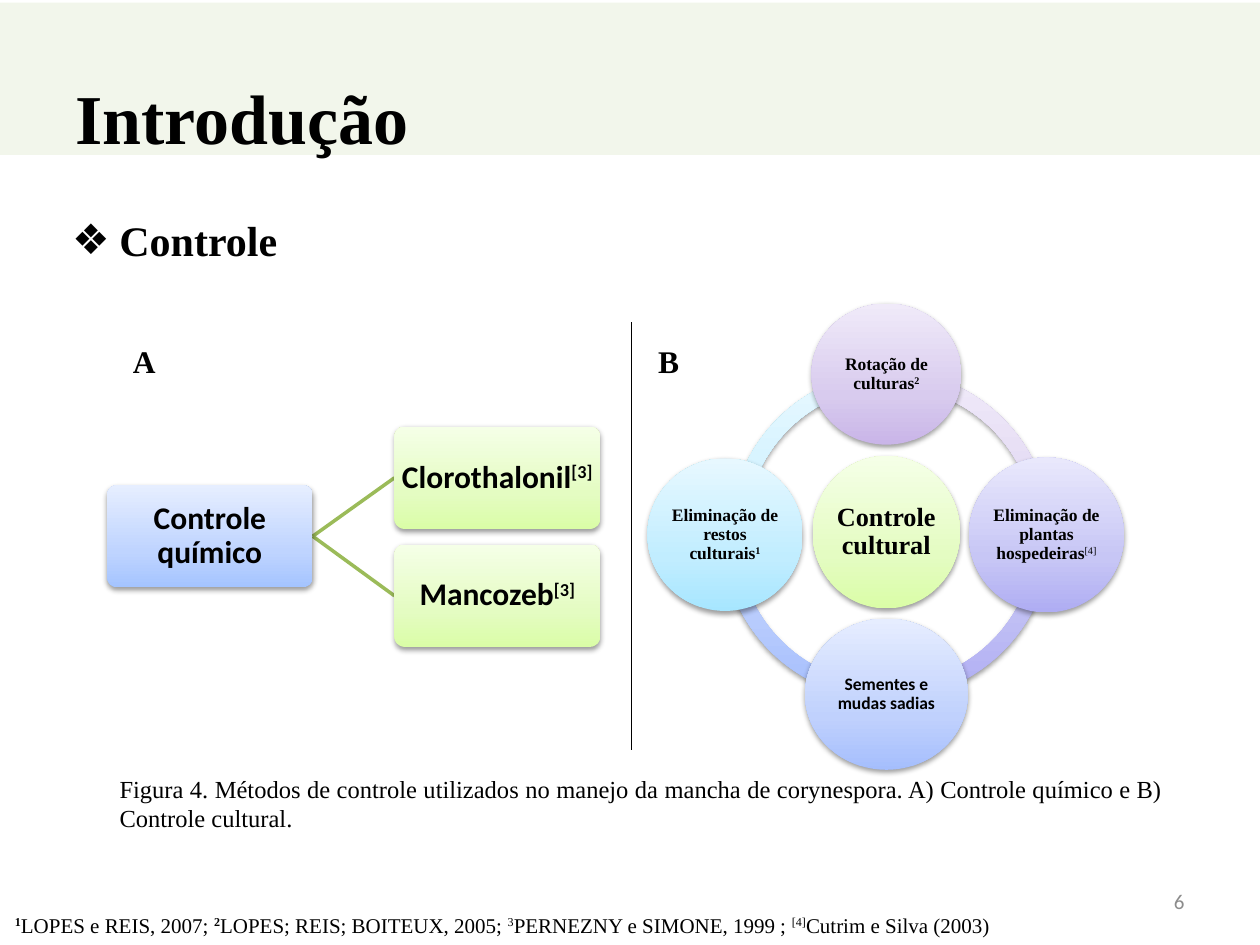
import copy

import pptx
import pptx.dml.color
import pptx.enum.shapes
import pptx.enum.text
import pptx.oxml
import pptx.oxml.ns
import pptx.util

Pt = pptx.util.Pt
SHAPE = pptx.enum.shapes.MSO_SHAPE
ALIGN = pptx.enum.text.PP_ALIGN
ANCHOR = pptx.enum.text.MSO_ANCHOR
NS = 'xmlns:a="http://schemas.openxmlformats.org/drawingml/2006/main"'
SERIF, SANS = "Times New Roman", "Calibri"

COLORS = {"black": "000000", "white": "FFFFFF", "band": "D7E4BD",
          "page": "8C8C8C", "branch": "9BBB59"}
GRADIENTS = {
    "cyan": ("A7E6FF", "C1EDFF", "E7F8FF"),
    "blue": ("A5BEFD", "C0D1FD", "E6EDFF"),
    "violet": ("AFADF3", "C7C6F5", "E9E8FC"),
    "lilac": ("C9B5E8", "D8CBEE", "F0EAF9"),
    "green": ("DAFDA7", "E4FCC2", "F5FFE7"),
    "sky": ("A4C4FF", "BFD4FF", "E6EEFF"),
}
STOPS = (0, 0.35, 1)
BOX_W, BOX_H = 117.5, 58.5


def rgb(name):
    return pptx.dml.color.RGBColor.from_string(COLORS.get(name, name))


def points(*values):
    return [Pt(value) for value in values]


def apply(target, formats):
    for name, value in formats.items():
        setattr(target, name, value)


def write(frame, runs, size, font=SERIF, color="black", bold=False,
          align=ALIGN.LEFT, anchor=ANCHOR.TOP, inset=None, spacing=None):
    """Fill the first paragraph from (text, is superscript, is bold) runs or a string."""
    apply(frame, {"word_wrap": True, "vertical_anchor": anchor})
    if inset is not None:
        sides = ("left", "right", "top", "bottom")
        apply(frame, {f"margin_{side}": Pt(inset) for side in sides})
    paragraph = frame.paragraphs[0]
    apply(paragraph, {"alignment": align, "line_spacing": spacing, "space_before": Pt(0)})
    if isinstance(runs, str):
        runs = [(runs, False, bold)]
    for text, raised, heavy in runs:
        run = paragraph.add_run()
        run.text = text
        apply(run.font, {"size": Pt(size), "name": font, "bold": heavy})
        run.font.color.rgb = rgb(color)
        if raised:
            run.font._element.set("baseline", "30000")


def add_text(slide, box, runs, size, **formats):
    write(slide.shapes.add_textbox(*points(*box)).text_frame, runs, size, **formats)


def add_plain(slide, box, color):
    shape = slide.shapes.add_shape(SHAPE.RECTANGLE, *points(*box))
    shape.shadow.inherit = False
    shape.fill.solid()
    shape.fill.fore_color.rgb = rgb(color)
    shape.line.fill.background()
    return shape


def add_glossy(slide, kind, box, gradient, adjustments=()):
    """Add a shape with a vertical three-stop gradient and a soft shadow below."""
    shape = slide.shapes.add_shape(kind, *points(*box))
    for index, value in enumerate(adjustments):
        shape.adjustments[index] = value
    shape.line.fill.background()
    shape.fill.gradient()
    shape.fill.gradient_angle = 90
    stop_list = shape._element.spPr.find(".//" + pptx.oxml.ns.qn("a:gsLst"))
    stop_list.append(copy.deepcopy(stop_list[-1]))
    for stop, position, color in zip(shape.fill.gradient_stops, STOPS, GRADIENTS[gradient]):
        stop.position = position
        stop.color.rgb = rgb(color)
    shape._element.spPr.append(pptx.oxml.parse_xml(
        f'<a:effectLst {NS}><a:outerShdw blurRad="{Pt(3.1)}" dist="{Pt(1.6)}" '
        'dir="5400000" rotWithShape="0"><a:srgbClr val="000000">'
        '<a:alpha val="38000"/></a:srgbClr></a:outerShdw></a:effectLst>'))
    return shape


def add_node(slide, kind, box, gradient, runs, size, font=SERIF, adjustments=()):
    node = add_glossy(slide, kind, box, gradient, adjustments)
    write(node.text_frame, runs, size, font=font, bold=True, align=ALIGN.CENTER,
          anchor=ANCHOR.MIDDLE, inset=0.9, spacing=0.9)


def add_line(slide, start, end, color, width):
    line = slide.shapes.add_connector(
        pptx.enum.shapes.MSO_CONNECTOR.STRAIGHT, *points(*start, *end))
    line.line.color.rgb = rgb(color)
    line.line.width = Pt(width)
    line._element.spPr.append(pptx.oxml.parse_xml(f"<a:effectLst {NS}/>"))


def add_heading(slide):
    band = add_plain(slide, (0, 1.5, 720, 87), "band")
    band_color = band._element.spPr.find(".//" + pptx.oxml.ns.qn("a:srgbClr"))
    band_color.append(pptx.oxml.parse_xml(f'<a:alpha {NS} val="30000"/>'))
    tree = slide.shapes._spTree
    tree.remove(band._element)
    tree.insert(2, band._element)

    title, topics = slide.shapes.title, slide.placeholders[1]
    for holder, box in ((title, (36, 21.6, 648, 90)), (topics, (34, 119, 648, 356))):
        apply(holder, dict(zip(("left", "top", "width", "height"), points(*box))))
    write(title.text_frame, "Introdução", 40, bold=True, anchor=ANCHOR.MIDDLE)
    properties = topics.text_frame.paragraphs[0]._p.get_or_add_pPr()
    properties.set("marL", str(Pt(27)))
    properties.set("indent", str(Pt(-27)))
    properties.append(pptx.oxml.parse_xml(f'<a:buChar {NS} char="❖"/>'))
    write(topics.text_frame, "Controle", 24, bold=True)


def add_cultural_cycle(slide):
    arcs = ((417, "cyan", 108, 162), (412.7, "blue", 54, 108),
            (412.7, "violet", 0, 54), (412.7, "lilac", 162, 0))
    for left, gradient, start, end in arcs:
        add_glossy(slide, SHAPE.BLOCK_ARC, (left, 211.7, 188, 188), gradient,
                   (start, end, 0.046))
    circles = (
        ((464.4, 260.6, 84.2, 87.1), "green", "Controle cultural", 15, SERIF),
        ((463.7, 173.5, 85.7, 80.6), "lilac",
         [("Rotação de culturas", False, True), ("2", True, True)], 10, SERIF),
        ((553.7, 261.4, 88.6, 88.6), "violet",
         [("Eliminação de plantas hospedeiras", False, True), ("[4]", True, False)], 10, SERIF),
        ((460, 353.5, 93, 86.4), "blue", "Sementes e mudas sadias", 10, SANS),
        ((370, 262, 88.6, 87.1), "cyan",
         [("Eliminação de restos culturais", False, True), ("1", True, True)], 10, SERIF),
    )
    for box, gradient, runs, size, font in circles:
        add_node(slide, SHAPE.OVAL, box, gradient, runs, size, font)


def add_chemical_tree(slide):
    root_left, root_top, product_left = 61.2, 277.2, 225.4
    fork = (root_left + BOX_W, root_top + BOX_H / 2)
    boxes = [(root_left, root_top, "sky", "Controle químico")]
    for product, top in (("Clorothalonil", 243.8), ("Mancozeb", 311.2)):
        add_line(slide, fork, (product_left, top + BOX_H / 2), "branch", 2)
        boxes.append((product_left, top, "green",
                      [(product, False, True), ("[3]", True, True)]))
    for left, top, gradient, runs in boxes:
        add_node(slide, SHAPE.ROUNDED_RECTANGLE, (left, top, BOX_W, BOX_H), gradient,
                 runs, 18, SANS, (0.1,))


def add_panel_letters(slide):
    for letter, left in (("A", 62.6), ("B", 362.2)):
        panel = add_plain(slide, (left, 184.7, 39.6, 42.5), "white")
        write(panel.text_frame, letter, 18, bold=True,
              align=ALIGN.CENTER, anchor=ANCHOR.MIDDLE)


def main():
    deck = pptx.Presentation()
    deck.slide_width, deck.slide_height = points(720, 540)
    slide = deck.slides.add_slide(deck.slide_layouts[1])
    add_heading(slide)
    add_text(slide, (516.2, 500.4, 167.8, 28.8), "6", 12, font=SANS, color="page",
             align=ALIGN.RIGHT, anchor=ANCHOR.MIDDLE)
    add_cultural_cycle(slide)
    add_chemical_tree(slide)
    add_line(slide, (360.7, 184.3), (360.7, 428.4), "black", 0.75)
    references = [
        ("1", True, True), ("LOPES e REIS, 2007; ", False, False),
        ("2", True, True), ("LOPES; REIS; BOITEUX, 2005; ", False, False),
        ("3", True, False), ("PERNEZNY e SIMONE, 1999 ; ", False, False),
        ("[4]", True, False), ("Cutrim e Silva (2003)", False, False),
    ]
    add_text(slide, (1.4, 517.7, 596.2, 36.7), references, 12)
    add_text(slide, (61.2, 438.5, 610.6, 41),
             "Figura 4. Métodos de controle utilizados no manejo da mancha de corynespora. "
             "A) Controle químico e B) Controle cultural.", 14, align=ALIGN.JUSTIFY)
    add_panel_letters(slide)
    deck.save("out.pptx")


if __name__ == "__main__":
    main()
